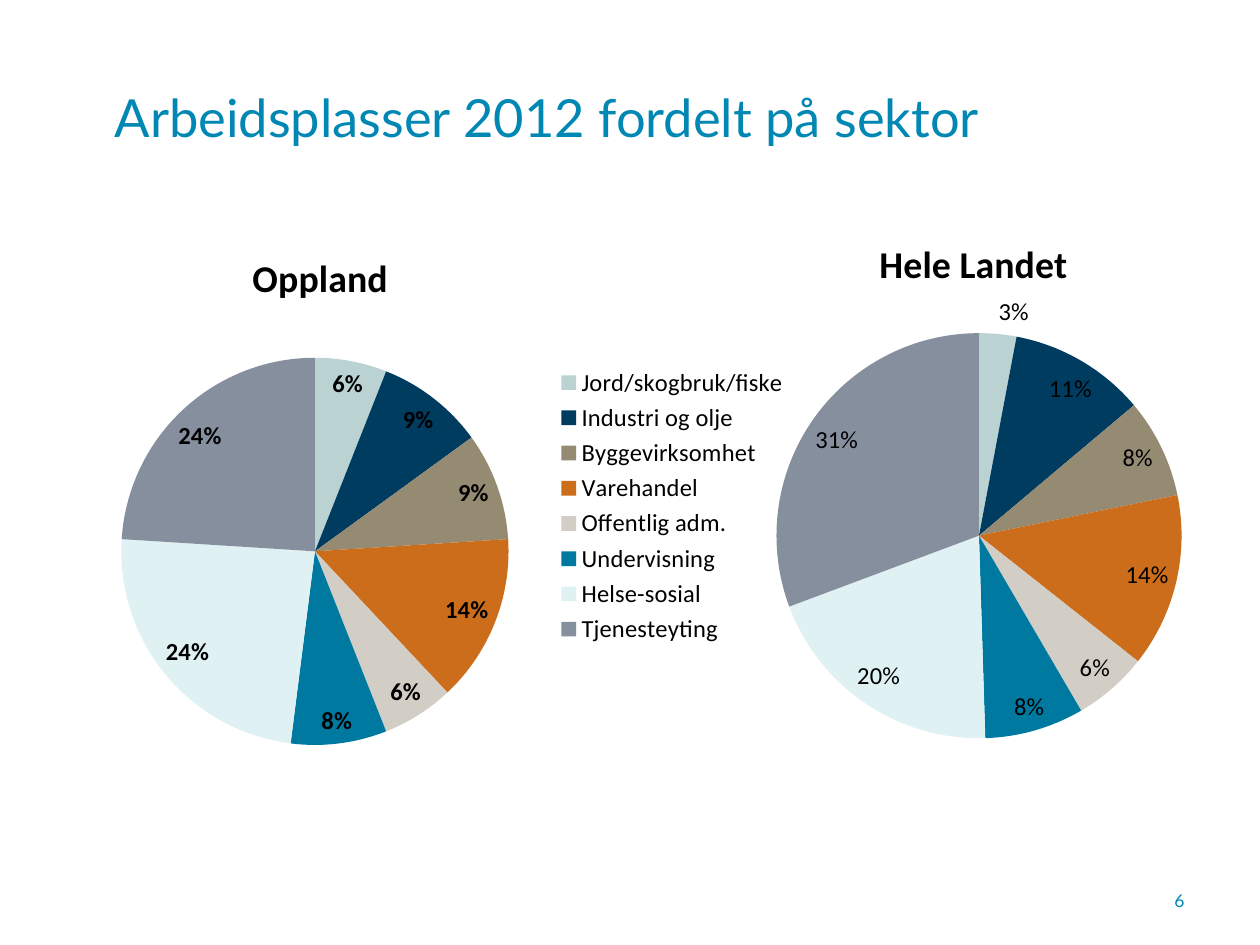
from lxml import etree
from pptx import Presentation
from pptx.chart.data import CategoryChartData
from pptx.dml.color import RGBColor
from pptx.enum.chart import XL_CHART_TYPE, XL_LABEL_POSITION, XL_LEGEND_POSITION
from pptx.enum.text import MSO_ANCHOR, PP_ALIGN
from pptx.oxml.ns import qn
from pptx.util import Inches, Pt

COLORS = {
    "accent": "0087B3", "text": "000000",
    "farming": "BAD2D2", "industry": "003C60", "building": "958A72", "trade": "CC6D1B",
    "public": "D2CDC5", "education": "0079A0", "health": "E0F1F3", "services": "868F9E",
}
SLICES = ["farming", "industry", "building", "trade",
          "public", "education", "health", "services"]
SECTORS = ["Jord/skogbruk/fiske", "Industri og olje", "Byggevirksomhet", "Varehandel",
           "Offentlig adm.", "Undervisning", "Helse-sosial", "Tjenesteyting"]


def write(tf, text, size, font="Lato", color="accent", bold=False,
          align=PP_ALIGN.LEFT, anchor=MSO_ANCHOR.MIDDLE):
    tf.word_wrap = True
    tf.vertical_anchor = anchor
    p = tf.paragraphs[0]
    p.alignment = align
    r = p.add_run()
    r.text = text
    r.font.size = Pt(size)
    r.font.name = font
    r.font.bold = bold
    r.font.color.rgb = RGBColor.from_string(COLORS[color])


def set_layout(parent, after, **values):
    for old in parent.findall(qn("c:layout")):
        parent.remove(old)
    layout = etree.Element(qn("c:layout"))
    manual = etree.SubElement(layout, qn("c:manualLayout"))
    for tag, val in values.items():
        etree.SubElement(manual, qn(f"c:{tag}")).set("val", str(val))
    if after is None:
        parent.insert(0, layout)
    else:
        after.addnext(layout)


prs = Presentation()
prs.slide_width, prs.slide_height = Inches(10), Inches(7.5)
s = prs.slides.add_slide(prs.slide_layouts[5])

title = s.shapes.title
title.left, title.top = Inches(0.81), Inches(0.3)
title.width, title.height = Inches(8.69), Inches(1.25)
write(title.text_frame, "Arbeidsplasser 2012 fordelt på sektor", 30)

pies = [
    dict(name="Oppland", cats=[str(i) for i in range(1, 9)],
         vals=[6, 9, 9, 14, 6, 8, 24, 24], box=(0, 1.71, 5, 4.52),
         title_at=(0.39, 0.05), plot=(0.19, 0.25, 0.62, 0.68), bold=True, legend=False),
    dict(name="Hele Landet", cats=SECTORS,
         vals=[3, 11, 8, 14, 6, 8, 20, 31], box=(4.31, 1.64, 5.45, 4.75),
         title_at=(0.48, 0.04), plot=(0.34, 0.21, 0.59, 0.68), bold=False, legend=True),
]
for pie in pies:
    data = CategoryChartData()
    data.categories = pie["cats"]
    data.add_series(pie["name"], pie["vals"])
    chart = s.shapes.add_chart(XL_CHART_TYPE.PIE, *[Inches(v) for v in pie["box"]], data).chart
    chart.font.size = Pt(18)
    chart.font.name = "Calibri"
    chart.font.color.rgb = RGBColor.from_string(COLORS["text"])

    chart.has_title = True
    write(chart.chart_title.text_frame, pie["name"], 21.6, font="Calibri", color="text",
          bold=True, align=PP_ALIGN.CENTER)
    x, y = pie["title_at"]
    title_xml = chart.chart_title._element
    set_layout(title_xml, title_xml.find(qn("c:tx")), xMode="edge", yMode="edge", x=x, y=y)
    x, y, w, h = pie["plot"]
    set_layout(chart._chartSpace.chart.plotArea, None, layoutTarget="inner",
               xMode="edge", yMode="edge", x=x, y=y, w=w, h=h)

    chart.has_legend = pie["legend"]
    if pie["legend"]:
        chart.legend.position = XL_LEGEND_POSITION.LEFT
        chart.legend.include_in_layout = False
        chart.legend.font.size = Pt(14)

    plot = chart.plots[0]
    plot.vary_by_categories = True
    for i, key in enumerate(SLICES):
        fill = plot.series[0].points[i].format.fill
        fill.solid()
        fill.fore_color.rgb = RGBColor.from_string(COLORS[key])
    plot.has_data_labels = True
    labels = plot.data_labels
    labels.show_value = False
    labels.show_percentage = True
    labels.number_format = "0%"
    labels.number_format_is_linked = False
    labels.position = XL_LABEL_POSITION.BEST_FIT
    labels.font.size = Pt(14)
    labels.font.bold = pie["bold"]

number = s.shapes.add_textbox(Inches(8.83), Inches(6.95), Inches(0.67), Inches(0.4))
write(number.text_frame, "6", 10, align=PP_ALIGN.RIGHT)

prs.save("out.pptx")
